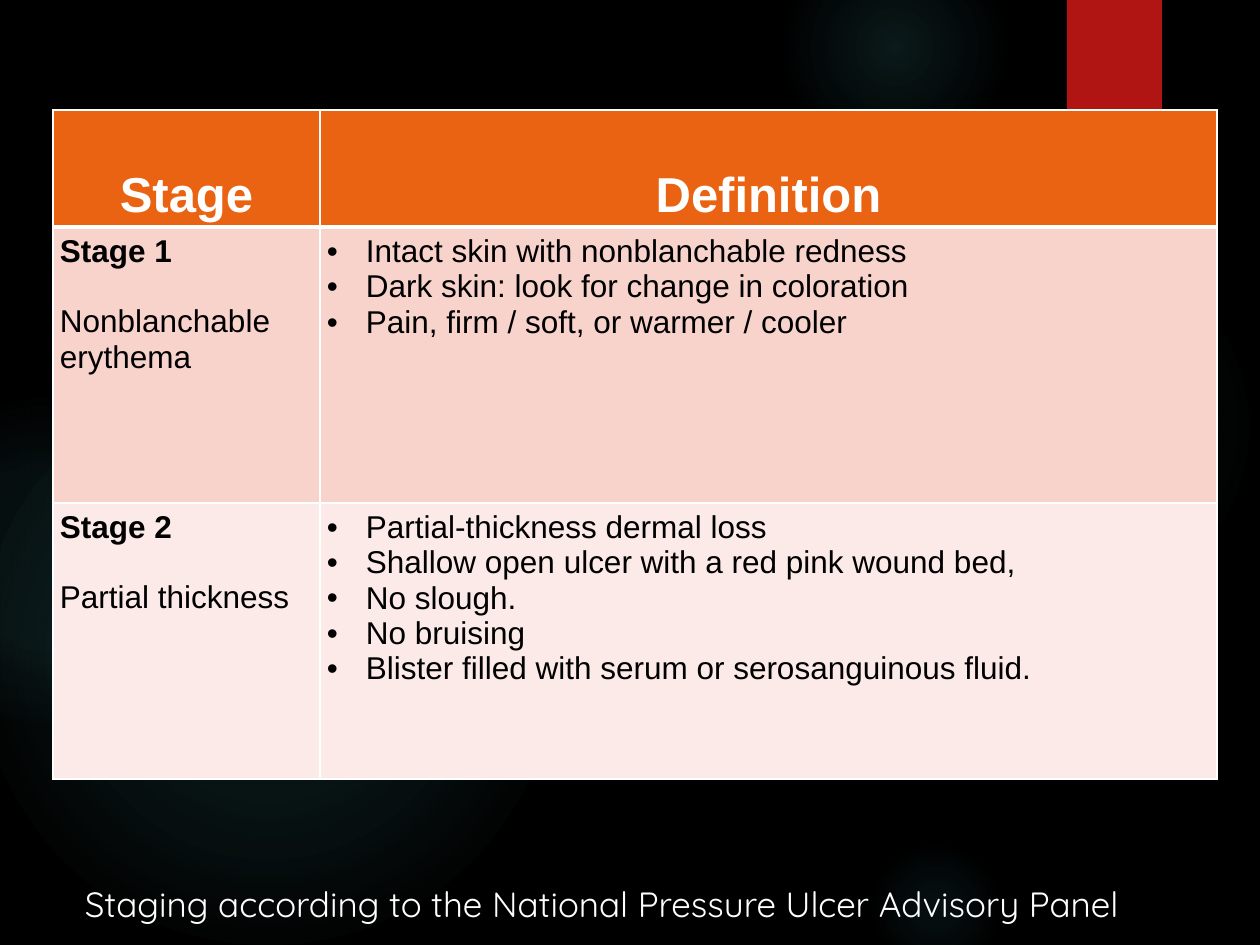
from dataclasses import dataclass
from typing import Any

from lxml.etree import SubElement
from pptx import Presentation
from pptx.dml.color import RGBColor
from pptx.enum.shapes import MSO_SHAPE
from pptx.enum.text import MSO_ANCHOR, PP_ALIGN
from pptx.oxml import parse_xml
from pptx.oxml.ns import nsdecls, qn
from pptx.util import Emu, Pt

PX_PER_INCH = 126


def px(length: int) -> Emu:
    return Emu(round(length * 914400 / PX_PER_INCH))


@dataclass(frozen=True)
class Theme:
    background: str = "000000"
    glow: str = "50B9C1"
    ribbon: str = "B01513"
    header: str = "EA6312"
    bands: tuple[str, ...] = ("F7D3CC", "FBEAE7")
    light: str = "FFFFFF"
    dark: str = "000000"
    table_font: str = "Arial"
    caption_font: str = "Quicksand"
    header_size: int = 28
    body_size: int = 18
    caption_size: int = 20


THEME = Theme()


@dataclass(frozen=True)
class Glow:
    left: int
    top: int
    diameter: int
    center_alpha: int
    middle_alpha: int
    edge: int  # percent of the radius where the glow fades out


@dataclass(frozen=True)
class Stage:
    name: str
    summary: str
    findings: tuple[str, ...]


GLOWS = (
    Glow(868, 231, 388, 7, 6, 69),
    Glow(784, -63, 221, 14, 7, 73),
    Glow(868, 840, 136, 9, 5, 66),
    Glow(-21, 368, 577, 11, 10, 75),
    Glow(-116, 399, 325, 8, 8, 72),
)

STAGES = (
    Stage("Stage 1", "Nonblanchable erythema", (
        "Intact skin with nonblanchable redness",
        "Dark skin: look for change in coloration",
        "Pain, firm / soft, or warmer / cooler",
    )),
    Stage("Stage 2", "Partial thickness", (
        "Partial-thickness dermal loss",
        "Shallow open ulcer with a red pink wound bed,",
        "No slough.",
        "No bruising",
        "Blister filled with serum or serosanguinous fluid.",
    )),
)

COLUMN_WIDTHS = (267, 897)
ROW_HEIGHTS = (117, 276, 276)
CELL_FORMAT = {
    "margin_left": px(7), "margin_right": px(7),
    "margin_top": px(7), "margin_bottom": px(4),
}


def apply_format(target: Any, values: dict[str, Any]) -> None:
    for name, value in values.items():
        setattr(target, name, value)


def add_glow(slide: Any, glow: Glow) -> None:
    shape = slide.shapes.add_shape(
        MSO_SHAPE.OVAL, px(glow.left), px(glow.top), px(glow.diameter), px(glow.diameter))
    shape.shadow.inherit = False
    shape.line.fill.background()
    stops = "".join(
        f'<a:gs pos="{position * 1000}"><a:srgbClr val="{THEME.glow}">'
        f'<a:alpha val="{alpha * 1000}"/></a:srgbClr></a:gs>'
        for position, alpha in ((0, glow.center_alpha), (36, glow.middle_alpha), (glow.edge, 0)))
    gradient = parse_xml(
        f'<a:gradFill {nsdecls("a")} rotWithShape="1"><a:gsLst>{stops}</a:gsLst>'
        '<a:path path="circle"><a:fillToRect l="50000" t="50000" r="50000" b="50000"/>'
        '</a:path></a:gradFill>')
    shape._element.spPr.find(qn("a:prstGeom")).addnext(gradient)


def add_ribbon(slide: Any) -> None:
    shape = slide.shapes.add_shape(MSO_SHAPE.RECTANGLE, px(1067), 0, px(95), px(151))
    shape.shadow.inherit = False
    shape.line.fill.background()
    shape.fill.solid()
    shape.fill.fore_color.rgb = RGBColor.from_string(THEME.ribbon)


def write_paragraph(paragraph: Any, text: str, font: str, size: int, color: str,
                    bold: bool = False, **paragraph_format: Any) -> None:
    run = paragraph.add_run()
    run.text = text
    apply_format(run.font, {"name": font, "size": Pt(size), "bold": bold})
    run.font.color.rgb = RGBColor.from_string(color)
    apply_format(paragraph, paragraph_format)


def add_bullet(paragraph: Any) -> None:
    properties = paragraph._p.get_or_add_pPr()
    properties.set("marL", str(px(39)))
    properties.set("indent", str(-px(39)))
    SubElement(properties, qn("a:buFont")).set("typeface", THEME.table_font)
    SubElement(properties, qn("a:buChar")).set("char", "•")


def style_cell(cell: Any, color: str, top: int = 1, bottom: int = 1) -> None:
    apply_format(cell, CELL_FORMAT)
    properties = cell._tc.get_or_add_tcPr()
    for side, width in (("L", 1), ("R", 1), ("T", top), ("B", bottom)):
        line = SubElement(properties, qn(f"a:ln{side}"), w=str(Pt(width)))
        fill = SubElement(line, qn("a:solidFill"))
        SubElement(fill, qn("a:srgbClr")).set("val", THEME.light)
    cell.fill.solid()
    cell.fill.fore_color.rgb = RGBColor.from_string(color)


def next_paragraph(cell: Any, index: int) -> Any:
    return cell.text_frame.add_paragraph() if index else cell.text_frame.paragraphs[0]


def add_stage_table(slide: Any) -> None:
    table = slide.shapes.add_table(
        len(ROW_HEIGHTS), len(COLUMN_WIDTHS), px(53), px(110),
        px(sum(COLUMN_WIDTHS)), px(sum(ROW_HEIGHTS))).table
    apply_format(table, {"first_row": False, "horz_banding": False})
    for column, width in zip(table.columns, COLUMN_WIDTHS):
        column.width = px(width)
    for row, height in zip(table.rows, ROW_HEIGHTS):
        row.height = px(height)

    # Header row
    for cell, title in zip(table.rows[0].cells, ("Stage", "Definition")):
        style_cell(cell, THEME.header, bottom=3)
        cell.vertical_anchor = MSO_ANCHOR.BOTTOM
        write_paragraph(cell.text_frame.paragraphs[0], title, THEME.table_font,
                        THEME.header_size, THEME.light, True, alignment=PP_ALIGN.CENTER)

    # One row for each stage
    body = (THEME.table_font, THEME.body_size, THEME.dark)
    for index, (stage, color) in enumerate(zip(STAGES, THEME.bands), start=1):
        name_cell, definition_cell = table.rows[index].cells
        for cell in (name_cell, definition_cell):
            style_cell(cell, color, top=3 if index == 1 else 1)
        write_paragraph(next_paragraph(name_cell, 0), stage.name, *body, bold=True)
        write_paragraph(next_paragraph(name_cell, 1), stage.summary, *body, space_before=Pt(20))
        for position, finding in enumerate(stage.findings):
            paragraph = next_paragraph(definition_cell, position)
            write_paragraph(paragraph, finding, *body)
            add_bullet(paragraph)


def add_caption(slide: Any) -> None:
    frame = slide.shapes.add_textbox(px(51), px(876), px(1102), px(60)).text_frame
    frame.word_wrap = True
    write_paragraph(
        frame.paragraphs[0], "Staging according to the National Pressure Ulcer Advisory Panel",
        THEME.caption_font, THEME.caption_size, THEME.light, alignment=PP_ALIGN.CENTER)


def main() -> None:
    presentation = Presentation()
    apply_format(presentation, {"slide_width": px(1260), "slide_height": px(945)})
    slide = presentation.slides.add_slide(presentation.slide_layouts[6])

    # Backdrop
    slide.background.fill.solid()
    slide.background.fill.fore_color.rgb = RGBColor.from_string(THEME.background)
    for glow in GLOWS:
        add_glow(slide, glow)
    add_ribbon(slide)

    # Content
    add_stage_table(slide)
    add_caption(slide)
    presentation.save("out.pptx")


if __name__ == "__main__":
    main()
